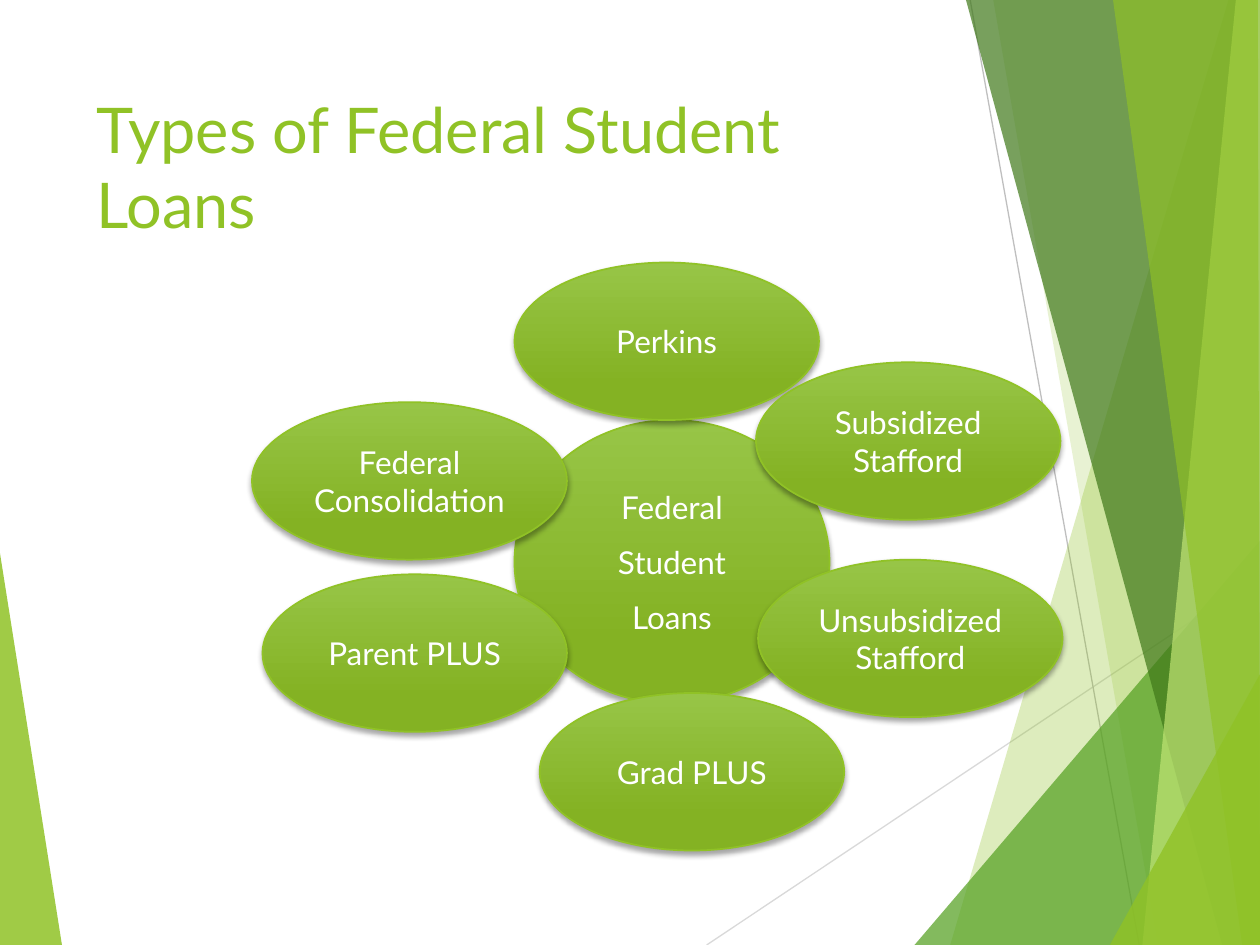
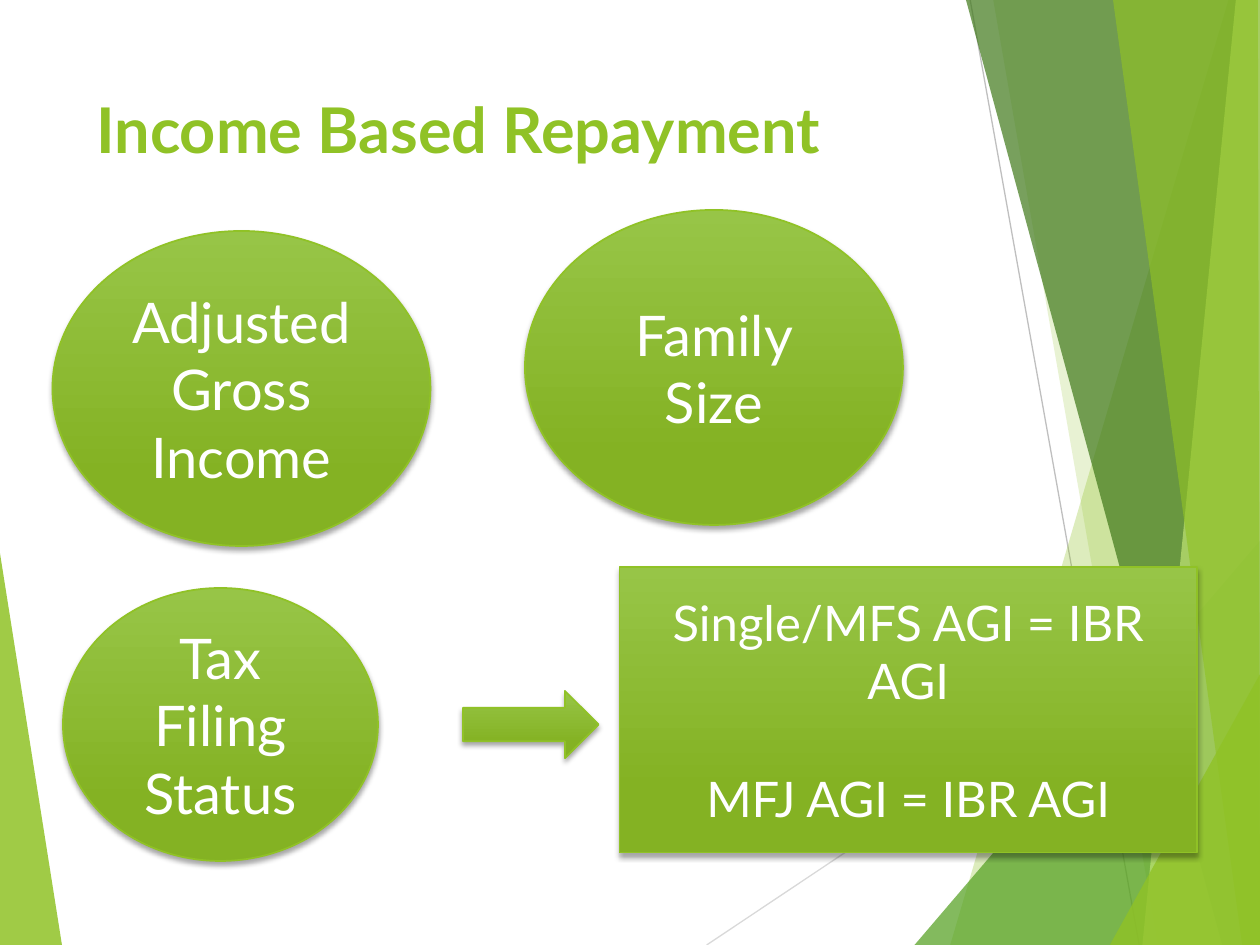
from lxml import etree
from pptx import Presentation, util as u
from pptx.dml.color import RGBColor
from pptx.enum import shapes, text
from pptx.oxml import ns

FONT = "Lato"
GREEN, WHITE, BLACK = "90C226", "FFFFFF", "000000"
GRADIENT = [(0, "97C547"), (0.78, "84B223")]
COLUMNS, ROWS = 120, 90  # grid squares are a twelfth of an inch
OVAL = shapes.MSO_SHAPE.OVAL

# start, end, colour
BACKDROP_LINES = [
    ((67.3, ROWS), (COLUMNS, 54.8), "D9D9D9"),
    ((92.4, 0), (108.5, ROWS), "BFBFBF"),
]
TOP_RIGHT, BOTTOM_RIGHT = (COLUMNS, 0), (COLUMNS, ROWS)
# colour, opacity in percent, corners
LEFT_WEDGE = (GREEN, 85, [(0, 52.7), (5.9, ROWS), (0, ROWS)])
RIGHT_FACETS = [
    (GREEN, 30, [(117, 0), (90.5, ROWS), BOTTOM_RIGHT, TOP_RIGHT]),
    (GREEN, 20, [(94.6, 0), (110.3, ROWS), BOTTOM_RIGHT, TOP_RIGHT]),
    ("54A021", 72, [(87.1, ROWS), (COLUMNS, 51.5), BOTTOM_RIGHT]),
    ("3F7819", 70, [(92, 0), (116.4, ROWS), BOTTOM_RIGHT, TOP_RIGHT]),
    ("C0E474", 70, [(117.7, 0), (108.8, ROWS), BOTTOM_RIGHT, TOP_RIGHT]),
    (GREEN, 65, [(106, 0), (118.3, ROWS), (COLUMNS, ROWS), (119.8, 0)]),
    (GREEN, 80, [(105.7, ROWS), (COLUMNS, 64.2), BOTTOM_RIGHT]),
]


def rgb(value):
    return RGBColor.from_string(value)


def add_xml(parent, tag, **attributes):
    return etree.SubElement(parent, ns.qn(tag), attributes)


def style_text(paragraph, size, color, bold=False):
    for span in paragraph.runs:
        span.font.name = FONT
        span.font.size = u.Pt(size)
        span.font.bold = bold
        span.font.color.rgb = rgb(color)


class SlideBuilder:
    def __init__(self, deck):
        self.deck = deck
        self.unit = deck.slide_width / COLUMNS
        self.page = None

    def grid(self, *lengths):
        """Turn grid squares into slide lengths."""
        return [u.Emu(round(length * self.unit)) for length in lengths]

    def new_page(self, title, bold=False):
        self.page = self.deck.slides.add_slide(self.deck.slide_layouts[6])
        self.facet(*LEFT_WEDGE)
        for start, end, color in BACKDROP_LINES:
            self.line(start, end, color)
        for facet in RIGHT_FACETS:
            self.facet(*facet)
        self.title(title, bold)

    def facet(self, color, opacity, corners):
        """Draw a see-through polygon of the backdrop."""
        points = [self.grid(*corner) for corner in corners]
        builder = self.page.shapes.build_freeform(*points[0], scale=1.0)
        builder.add_line_segments(points[1:], close=True)
        shape = builder.convert_to_shape()
        shape.shadow.inherit = False
        shape.fill.solid()
        shape.fill.fore_color.rgb = rgb(color)
        shape.line.fill.background()
        paint = shape.fill._xPr.find(ns.qn("a:solidFill"))[0]
        add_xml(paint, "a:alpha", val=str(opacity * 1000))

    def line(self, start, end, color):
        connector = self.page.shapes.add_connector(
            shapes.MSO_CONNECTOR.STRAIGHT, *self.grid(*start, *end))
        connector.line.color.rgb = rgb(color)
        connector.line.width = u.Pt(0.75)
        add_xml(connector._element.spPr, "a:effectLst")

    def title(self, words, bold):
        box = self.page.shapes.add_textbox(*self.grid(8, 8, 83.3, 17.3))
        box.text_frame.word_wrap = True
        paragraph = box.text_frame.paragraphs[0]
        paragraph.text = words
        style_text(paragraph, 36, GREEN, bold)

    def glossy(self, kind, place, lines=(), size=18, gap=0):
        """Draw a shaded shape; place is left, top, width, height."""
        shape = self.page.shapes.add_shape(kind, *self.grid(*place))
        shape.fill.gradient()
        shape.fill.gradient_angle = 270
        for stop, (position, color) in zip(shape.fill.gradient_stops, GRADIENT):
            stop.position = position
            stop.color.rgb = rgb(color)
        shape.line.color.rgb = rgb(GREEN)
        shape.line.width = u.Pt(1)
        self.drop_shadow(shape)
        frame = shape.text_frame
        frame.word_wrap = True
        frame.vertical_anchor = text.MSO_ANCHOR.MIDDLE
        for index, words in enumerate(lines):
            paragraph = frame.add_paragraph() if index else frame.paragraphs[0]
            paragraph.text = words
            paragraph.alignment = text.PP_ALIGN.CENTER
            if index:
                paragraph.space_before = u.Pt(gap)
            style_text(paragraph, size, WHITE)

    def drop_shadow(self, shape):
        shape.shadow.inherit = False
        effects = shape._element.spPr.find(ns.qn("a:effectLst"))
        shadow = add_xml(effects, "a:outerShdw", blurRad=str(u.Pt(3)),
                         dist=str(u.Pt(2)), dir="5400000", rotWithShape="0")
        color = add_xml(shadow, "a:srgbClr", val=BLACK)
        add_xml(color, "a:alpha", val="35000")


def loan_types(slide):
    slide.new_page("Types of Federal Student Loans")
    slide.glossy(OVAL, (49, 40, 30, 27), ["Federal", "Student", "Loans"], gap=10)
    loans = [
        ("Parent PLUS", 25, 54.7, 29),
        ("Federal Consolidation", 24, 38.3, 30),
        ("Grad PLUS", 51.4, 66, 29),
        ("Unsubsidized Stafford", 72.2, 53.3, 29),
        ("Perkins", 49, 25, 29),
        ("Subsidized Stafford", 72, 34.5, 29),
    ]
    for name, left, top, width in loans:
        slide.glossy(OVAL, (left, top, width, 15), [name])


def income_based_repayment(slide):
    slide.new_page("Income Based Repayment", bold=True)
    factors = [
        ("Adjusted Gross Income", (5, 22, 36, 30)),
        ("Family Size", (50, 20, 36, 30)),
        ("Tax Filing Status", (6, 56, 30, 26)),
    ]
    for name, place in factors:
        slide.glossy(OVAL, place, [name], size=32)
    slide.glossy(shapes.MSO_SHAPE.RIGHT_ARROW, (44.1, 65.8, 12.9, 6.4))
    slide.glossy(shapes.MSO_SHAPE.RECTANGLE, (59, 54, 55, 27.2),
                 ["Single/MFS AGI = IBR AGI", "MFJ AGI = IBR AGI"],
                 size=28, gap=33.6)


def main():
    deck = Presentation()
    deck.slide_width, deck.slide_height = u.Inches(10), u.Inches(7.5)
    slide = SlideBuilder(deck)
    loan_types(slide)
    income_based_repayment(slide)
    deck.save("out.pptx")


if __name__ == "__main__":
    main()
